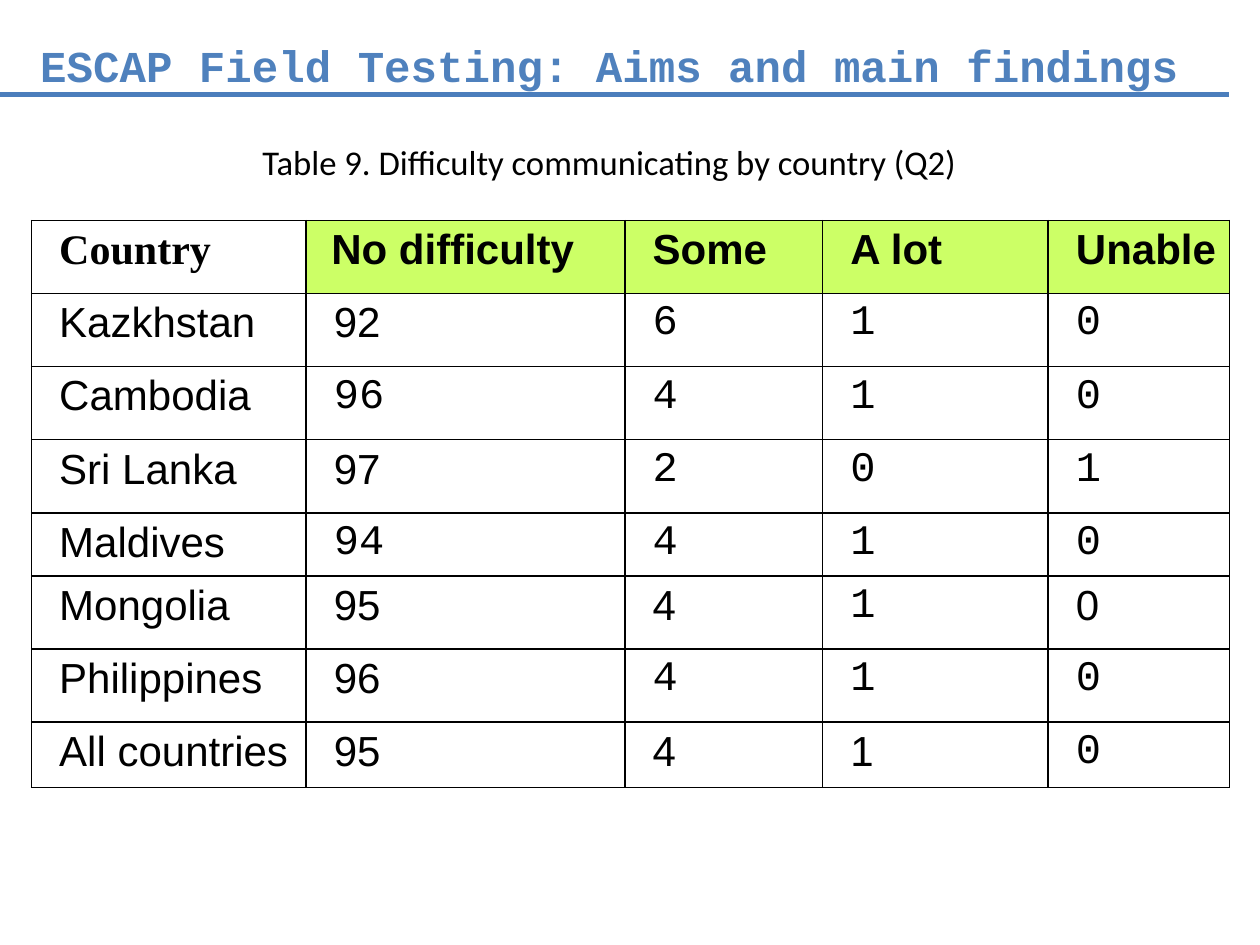
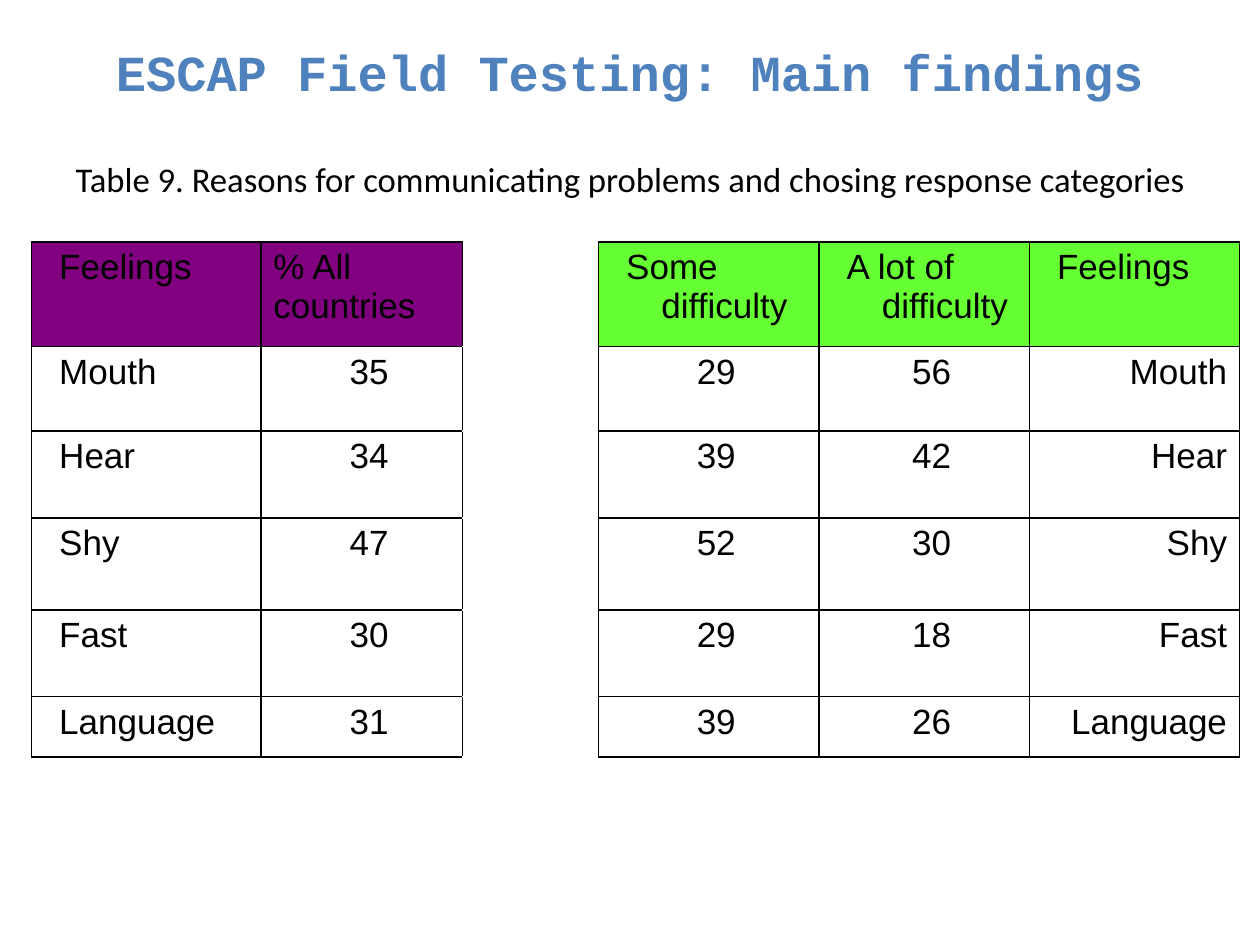
from lxml import etree
from pptx import Presentation, util as u
from pptx.dml.color import RGBColor
from pptx.enum import shapes, text
from pptx.oxml.ns import qn

BLACK, BLUE, RULE = "000000", "4F81BD", "4B7EBC"
LIME, GREEN, PURPLE = "CCFF66", "66FF33", "800080"
ALIGN = {"l": text.PP_ALIGN.LEFT, "c": text.PP_ALIGN.CENTER, "r": text.PP_ALIGN.RIGHT}
HANGING = (0.4, -0.28)
COURIER_LINE = 1.13  # line height as a multiple of the font size

DIFFICULTY = [
    ["Country", "No difficulty", "Some", "A lot", "Unable"],
    ["Kazkhstan", "92", "6", "1", "0"],
    ["Cambodia", "96", "4", "1", "0"],
    ["Sri Lanka", "97", "2", "0", "1"],
    ["Maldives", "94", "4", "1", "0"],
    ["Mongolia", "95", "4", "1", "0"],
    ["Philippines", "96", "4", "1", "0"],
    ["All countries", "95", "4", "1", "0"],
]
# Numbers set in Arial, as (row, column); the others are in Courier New
ARIAL_NUMBERS = {(1, 1), (3, 1), (5, 1), (5, 2), (5, 4), (6, 1), (7, 1), (7, 2), (7, 3)}

REASONS = [
    ["Feelings", "% All countries", "", "Some difficulty", "A lot of difficulty", "Feelings"],
    ["Mouth", "35", "", "29", "56", "Mouth"],
    ["Hear", "34", "", "39", "42", "Hear"],
    ["Shy", "47", "", "52", "30", "Shy"],
    ["Fast", "30", "", "29", "18", "Fast"],
    ["Language", "31", "", "39", "26", "Language"],
]
GAP_COLUMN = 2


def rgb(value):
    return RGBColor.from_string(value)


def add_run(p, words, color=BLACK, **font):
    r = p.add_run()
    r.text = words
    r.font.color.rgb = rgb(color)
    for name, value in font.items():
        setattr(r.font, name, value)


def add_slide(prs, box, heading, size, caption):
    """Add a slide whose title holds a blue heading and a table caption."""
    s = prs.slides.add_slide(prs.slide_layouts.get_by_name("Title Only"))
    sp = s.shapes.title
    sp.left, sp.top, sp.width, sp.height = map(u.Inches, box)
    tf = sp.text_frame
    frame = {"word_wrap": True, "auto_size": text.MSO_AUTO_SIZE.NONE,
             "vertical_anchor": text.MSO_ANCHOR.MIDDLE,
             "margin_bottom": u.Inches(1.05)}  # lifts the text clear of the table
    for name, value in frame.items():
        setattr(tf, name, value)
    p = tf.paragraphs[0]
    p.alignment = ALIGN["c"]
    add_run(p, heading, BLUE, name="Courier New", size=u.Pt(size), bold=True)
    p = tf.add_paragraph()
    p.alignment = ALIGN["c"]
    p.space_before = u.Pt(round(size * COURIER_LINE, 1))
    add_run(p, caption, name="Calibri", size=u.Pt(19.8), bold=False)
    return s


def add_rule(s, y, right):
    line = s.shapes.add_connector(shapes.MSO_CONNECTOR.STRAIGHT,
                                  0, u.Inches(y), u.Inches(right), u.Inches(y))
    line.line.color.rgb = rgb(RULE)
    line.line.width = u.Pt(3)
    etree.SubElement(line._element.spPr, qn("a:effectLst"))


def set_borders(cell, sides):
    """Draw 1 pt black borders; they must precede the fill in the cell's XML."""
    tc_pr = cell._tc.get_or_add_tcPr()
    for i, side in enumerate(sides):
        ln = etree.Element(qn(f"a:ln{side}"), w=str(u.Pt(1)))
        fill = etree.SubElement(ln, qn("a:solidFill"))
        etree.SubElement(fill, qn("a:srgbClr"), val=BLACK)
        tc_pr.insert(i, ln)


def fill_cell(cell, words, fill=None, align="l", indent=HANGING, before=0, **font):
    if fill:
        cell.fill.solid()
        cell.fill.fore_color.rgb = rgb(fill)
    else:
        cell.fill.background()
    set_borders(cell, "LRTB" if words else "LR")
    if not words:
        return
    p = cell.text_frame.paragraphs[0]
    p.alignment = ALIGN[align]
    p.space_before = u.Pt(before)
    p_pr = p._p.get_or_add_pPr()
    for name, value in zip(("marL", "indent"), indent):
        p_pr.set(name, str(u.Inches(value)))
    add_run(p, words, **font)


def add_table(s, top, widths, heights, rows, cell_format):
    """Add a table; cell_format(row, column) gives the format of each cell."""
    frame = s.shapes.add_table(len(rows), len(widths), u.Inches(0.25), u.Inches(top),
                               u.Inches(sum(widths)), u.Inches(sum(heights)))
    table = frame.table
    table.first_row = table.horz_banding = False
    for column, width in zip(table.columns, widths):
        column.width = u.Inches(width)
    for row, height in zip(table.rows, heights):
        row.height = u.Inches(height)
    for i, row in enumerate(rows):
        for j, words in enumerate(row):
            fill_cell(table.cell(i, j), words, **cell_format(i, j))


def difficulty_format(i, j):
    fmt = {"size": u.Pt(24), "bold": i == 0, "name": "Arial"}
    if i == 0 and j == 0:
        fmt["name"] = "Times New Roman"
    elif i == 0:
        fmt["fill"] = LIME
        if j == 1:
            fmt["indent"] = (0.1, 0)
    elif j and (i, j) not in ARIAL_NUMBERS:
        fmt.update(name="Courier New", indent=(0.12, 0), before=4)
    return fmt


def reasons_format(i, j):
    fmt = {"size": u.Pt(20), "bold": False, "name": "Arial"}
    if i:
        fmt["align"] = "lccccr"[j]
    elif j != GAP_COLUMN:
        fmt["fill"] = PURPLE if j < GAP_COLUMN else GREEN
        if j == 1:
            fmt["indent"] = (0, 0)
    return fmt


def main():
    prs = Presentation()
    prs.slide_width, prs.slide_height = u.Inches(10), u.Inches(7.5)

    s = add_slide(prs, (0.17, 0.75, 9.33, 1.25),
                  "ESCAP Field Testing: Aims and main findings", 25.2,
                  "Table 9. Difficulty communicating by country (Q2)")
    add_rule(s, 0.75, 9.75)
    add_table(s, 1.75, [2.18, 2.53, 1.57, 1.79, 1.44],
              [0.58] * 4 + [0.5, 0.58, 0.58, 0.52], DIFFICULTY, difficulty_format)

    s = add_slide(prs, (0.5, 0.83, 9, 1.25),
                  "ESCAP Field Testing: Main findings", 28.8,
                  "Table 9. Reasons for communicating problems and chosing response categories")
    add_table(s, 1.92, [1.82, 1.6, 1.08, 1.75, 1.67, 1.67],
              [0.83, 0.67, 0.69, 0.73, 0.69, 0.48], REASONS, reasons_format)

    prs.save("out.pptx")


if __name__ == "__main__":
    main()
